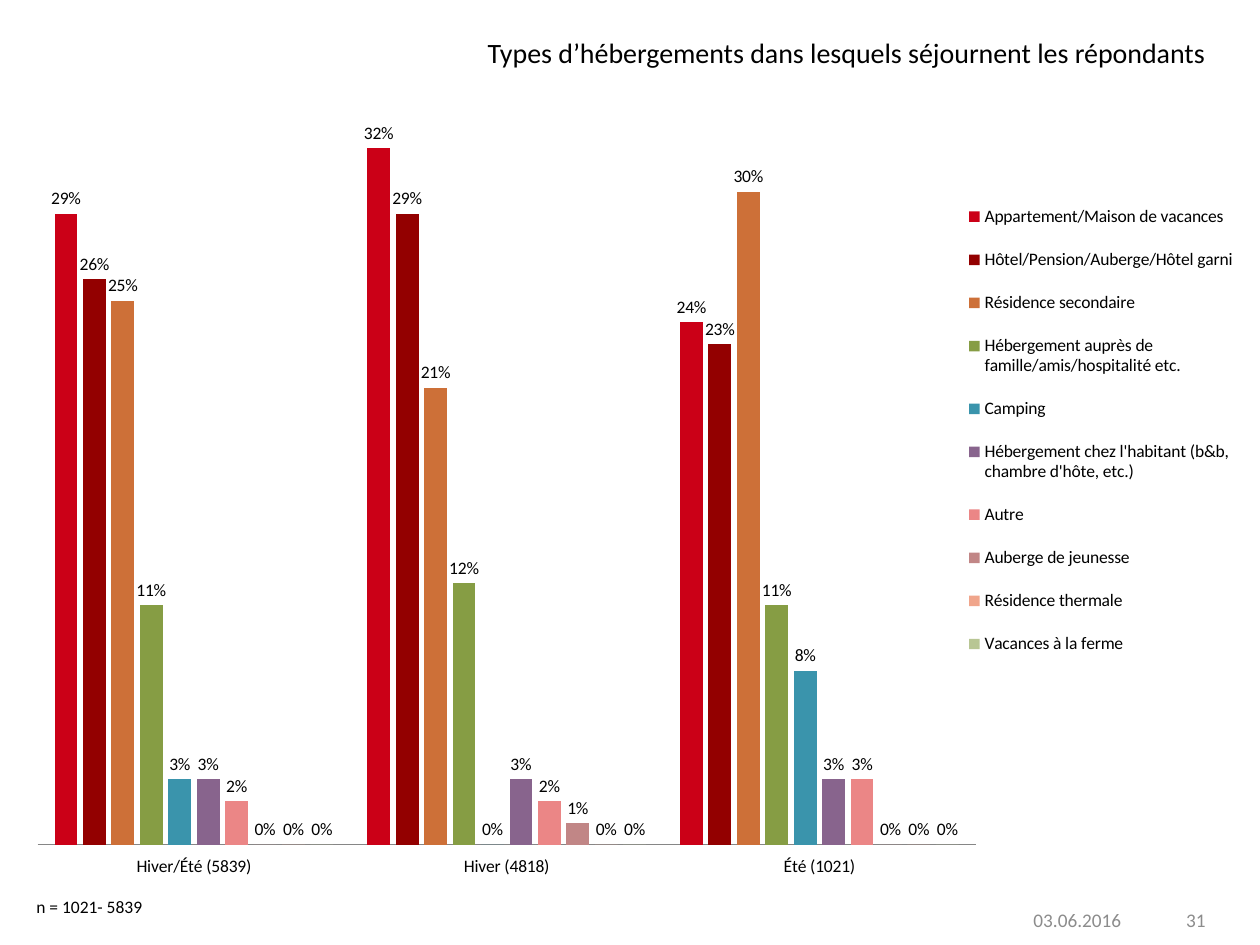
from typing import NamedTuple

from lxml.etree import SubElement
from pptx import Presentation
from pptx.chart.data import CategoryChartData as Data
from pptx.dml.color import RGBColor as Rgb
from pptx.enum.chart import XL_CHART_TYPE as Kind
from pptx.enum.chart import XL_LABEL_POSITION as Spot
from pptx.enum.chart import XL_LEGEND_POSITION as Side
from pptx.enum.chart import XL_TICK_LABEL_POSITION as Tick
from pptx.enum.chart import XL_TICK_MARK as Mark
from pptx.enum.text import MSO_ANCHOR as Anchor
from pptx.enum.text import PP_ALIGN as Align
from pptx.oxml.ns import qn
from pptx.util import Emu, Pt

FONT = "Calibri"
BLACK = "000000"
GREY = "8C8C8C"


class Note(NamedTuple):
    """A line of text and its box in px."""
    text: str
    left: int
    top: int
    width: int
    height: int
    size: int
    ink: str
    align: Align = Align.LEFT
    anchor: Anchor = Anchor.TOP


class Lodging(NamedTuple):
    """One kind of lodging with its shares in percent."""
    name: str
    shares: tuple[int, int, int]
    ink: str


NOTES = [
    Note("03.06.2016", 1021, 895, 126, 50, 11, GREY, anchor=Anchor.MIDDLE),
    Note("31", 925, 895, 293, 50, 11, GREY, Align.RIGHT, Anchor.MIDDLE),
    Note("Types d’hébergements dans lesquels séjournent les répondants",
         432, 29, 786, 47, 16, BLACK, Align.RIGHT),
    Note("n = 1021- 5839", 24, 890, 175, 34, 10, BLACK),
]
SEASONS = ["Hiver/Été (5839)", "Hiver (4818)", "Été (1021)"]
LODGINGS = [
    Lodging("Appartement/Maison de vacances", (29, 32, 24), "CB0017"),
    Lodging("Hôtel/Pension/Auberge/Hôtel garni", (26, 29, 23), "930000"),
    Lodging("Résidence secondaire", (25, 21, 30), "CD7038"),
    Lodging("Hébergement auprès de famille/amis/hospitalité etc.",
            (11, 12, 11), "869D44"),
    Lodging("Camping", (3, 0, 8), "3A94AC"),
    Lodging("Hébergement chez l'habitant (b&b, chambre d'hôte, etc.)",
            (3, 3, 3), "88648D"),
    Lodging("Autre", (2, 2, 3), "EB8686"),
    Lodging("Auberge de jeunesse", (0, 1, 0), "C18686"),
    Lodging("Résidence thermale", (0, 0, 0), "F0A58B"),
    Lodging("Vacances à la ferme", (0, 0, 0), "B8C694"),
]


def px(count: int) -> Emu:
    """Turn px into EMU."""
    return Emu(round(count * 914400 / 126))


def tint(ink: str) -> Rgb:
    """Turn a hex string into a colour."""
    return Rgb.from_string(ink)


def style(font, size: int, ink: str) -> None:
    """Set the face, size and colour of a font."""
    font.name, font.size = FONT, Pt(size)
    font.color.rgb = tint(ink)


def write(slide, note: Note) -> None:
    """Add one line of text."""
    box = slide.shapes.add_textbox(
        px(note.left), px(note.top), px(note.width), px(note.height))
    frame = box.text_frame
    frame.word_wrap = True
    frame.vertical_anchor = note.anchor
    line = frame.paragraphs[0]
    line.text, line.alignment = note.text, note.align
    style(line.font, note.size, note.ink)


def place(part, inner: bool, **spots: float) -> None:
    """Give a chart part a fixed layout in shares of the chart."""
    layout = part.find(qn("c:layout"))
    if layout is None:
        layout = SubElement(part, qn("c:layout"))
        after = part.find(qn("c:legendPos"))
        if after is None:
            part.insert(0, layout)
        else:
            after.addnext(layout)
    manual = SubElement(layout, qn("c:manualLayout"))
    if inner:
        SubElement(manual, qn("c:layoutTarget")).set("val", "inner")
    for mode in ("xMode", "yMode"):
        SubElement(manual, qn(f"c:{mode}")).set("val", "edge")
    for key, spot in spots.items():
        SubElement(manual, qn(f"c:{key}")).set("val", str(spot))


def plot(slide) -> None:
    """Add the column chart of lodgings by season."""
    data = Data(number_format="0%")
    data.categories = SEASONS
    for kind in LODGINGS:
        data.add_series(kind.name, [share / 100 for share in kind.shares])
    chart = slide.shapes.add_chart(
        Kind.COLUMN_CLUSTERED, px(0), px(58), px(1251), px(837), data).chart
    style(chart.font, 10, BLACK)
    chart.has_title = False

    bars = chart.plots[0]
    bars.gap_width, bars.overlap = 150, -25
    bars.vary_by_categories = False
    for kind, row in zip(LODGINGS, bars.series):
        row.format.fill.solid()
        row.format.fill.fore_color.rgb = tint(kind.ink)
        row.invert_if_negative = False
        tags = row.data_labels
        tags.show_value = True
        tags.number_format, tags.number_format_is_linked = "0%", False
        tags.position = Spot.OUTSIDE_END
        style(tags.font, 10, BLACK)

    base = chart.category_axis
    base.major_tick_mark = base.minor_tick_mark = Mark.NONE
    base.tick_label_position = Tick.LOW
    base.format.line.color.rgb = tint("868686")
    scale = chart.value_axis
    scale.minimum_scale, scale.maximum_scale = 0, 0.35
    scale.has_major_gridlines = False
    scale.visible = False

    chart.has_legend = True
    key = chart.legend
    key.position, key.include_in_layout = Side.RIGHT, False
    style(key.font, 10, BLACK)
    root = chart.element.find(qn("c:chart"))
    place(root.find(qn("c:plotArea")), True, x=0.03, y=0.03, w=0.75, h=0.91)
    place(root.find(qn("c:legend")), False, x=0.77, y=0.15, w=0.22, h=0.59)


def main() -> None:
    """Build the slide and save it."""
    deck = Presentation()
    deck.slide_width, deck.slide_height = px(1260), px(945)
    slide = deck.slides.add_slide(deck.slide_layouts[6])
    for note in NOTES:
        write(slide, note)
    plot(slide)
    deck.save("out.pptx")


if __name__ == "__main__":
    main()
